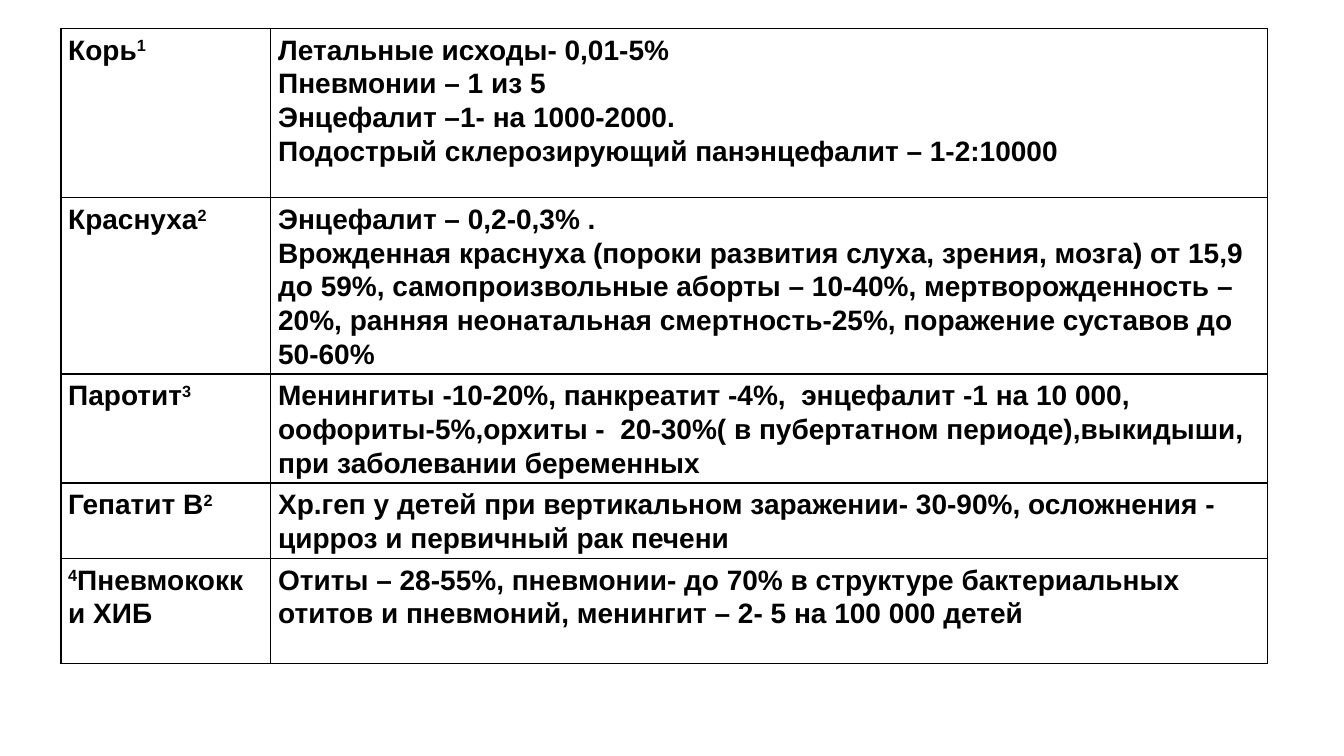
from lxml import etree
from pptx import Presentation
from pptx.dml.color import RGBColor
from pptx.oxml.ns import qn
from pptx.util import Pt

# Content: disease as (text, is superscript) spans, complications, row height
ROWS = [
    ([("Корь", False), ("1", True)],
     ["Летальные исходы- 0,01-5%",
      "Пневмонии – 1 из 5",
      "Энцефалит –1- на 1000-2000.",
      "Подострый склерозирующий панэнцефалит – 1-2:10000"], 121),
    ([("Краснуха", False), ("2", True)],
     ["Энцефалит – 0,2-0,3% .",
      "Врожденная краснуха (пороки развития слуха, зрения, мозга) от 15,9 "
      "до 59%, самопроизвольные аборты – 10-40%, мертворожденность – 20%, "
      "ранняя неонатальная смертность-25%, поражение суставов до 50-60%"], 121),
    ([("Паротит", False), ("3", True)],
     ["Менингиты -10-20%, панкреатит -4%,  энцефалит -1 на 10 000, "
      "оофориты-5%,орхиты -  20-30%( в пубертатном периоде),выкидыши, "
      "при заболевании беременных"], 75),
    ([("Гепатит В", False), ("2", True)],
     ["Хр.геп у детей при вертикальном заражении- 30-90%, осложнения - "
      "цирроз и первичный рак печени"], 51),
    ([("4", True), ("Пневмококк и ХИБ", False)],
     ["Отиты – 28-55%, пневмонии- до 70% в структуре бактериальных отитов "
      "и пневмоний, менингит – 2- 5 на 100 000 детей"], 75),
]
LEFT, TOP = 43.5, 20.3
COLUMNS = [150, 712]
BLACK = "000000"


def colour(value):
    return RGBColor.from_string(value)


def set_borders(cell, left_width):
    properties = cell._tc.get_or_add_tcPr()
    sides = [("L", left_width), ("R", 1), ("T", 1), ("B", 1)]
    for position, (side, width) in enumerate(sides):
        line = etree.Element(qn(f"a:ln{side}"), w=str(Pt(width)))
        fill = etree.SubElement(line, qn("a:solidFill"))
        etree.SubElement(fill, qn("a:srgbClr"), val=BLACK)
        properties.insert(position, line)


def fill_cell(cell, paragraphs, left_width):
    cell.fill.background()
    cell.margin_left = cell.margin_right = Pt(5.2)
    cell.margin_top = cell.margin_bottom = Pt(2.9)
    frame = cell.text_frame
    for number, spans in enumerate(paragraphs):
        para = frame.add_paragraph() if number else frame.paragraphs[0]
        para.line_spacing = Pt(24)
        for words, raised in spans:
            span = para.add_run()
            span.text = words
            font = span.font
            font.name, font.size, font.bold = "Arial", Pt(20), True
            font.color.rgb = colour(BLACK)
            if raised:
                span._r.get_or_add_rPr().set("baseline", "30000")
    set_borders(cell, left_width)


# Page
deck = Presentation()
deck.slide_width, deck.slide_height = Pt(960), Pt(540)
page = deck.slides.add_slide(deck.slide_layouts[6])

# Table of complications
table = page.shapes.add_table(
    len(ROWS), len(COLUMNS), Pt(LEFT), Pt(TOP), Pt(sum(COLUMNS)),
    Pt(sum(height for _, _, height in ROWS))).table
table.first_row = table.horz_banding = False
for column, width in zip(table.columns, COLUMNS):
    column.width = Pt(width)
for row, (disease, complications, height) in zip(table.rows, ROWS):
    row.height = Pt(height)
    fill_cell(row.cells[0], [disease], 2.25)
    fill_cell(row.cells[1], [[(words, False)] for words in complications], 1)

deck.save("out.pptx")
